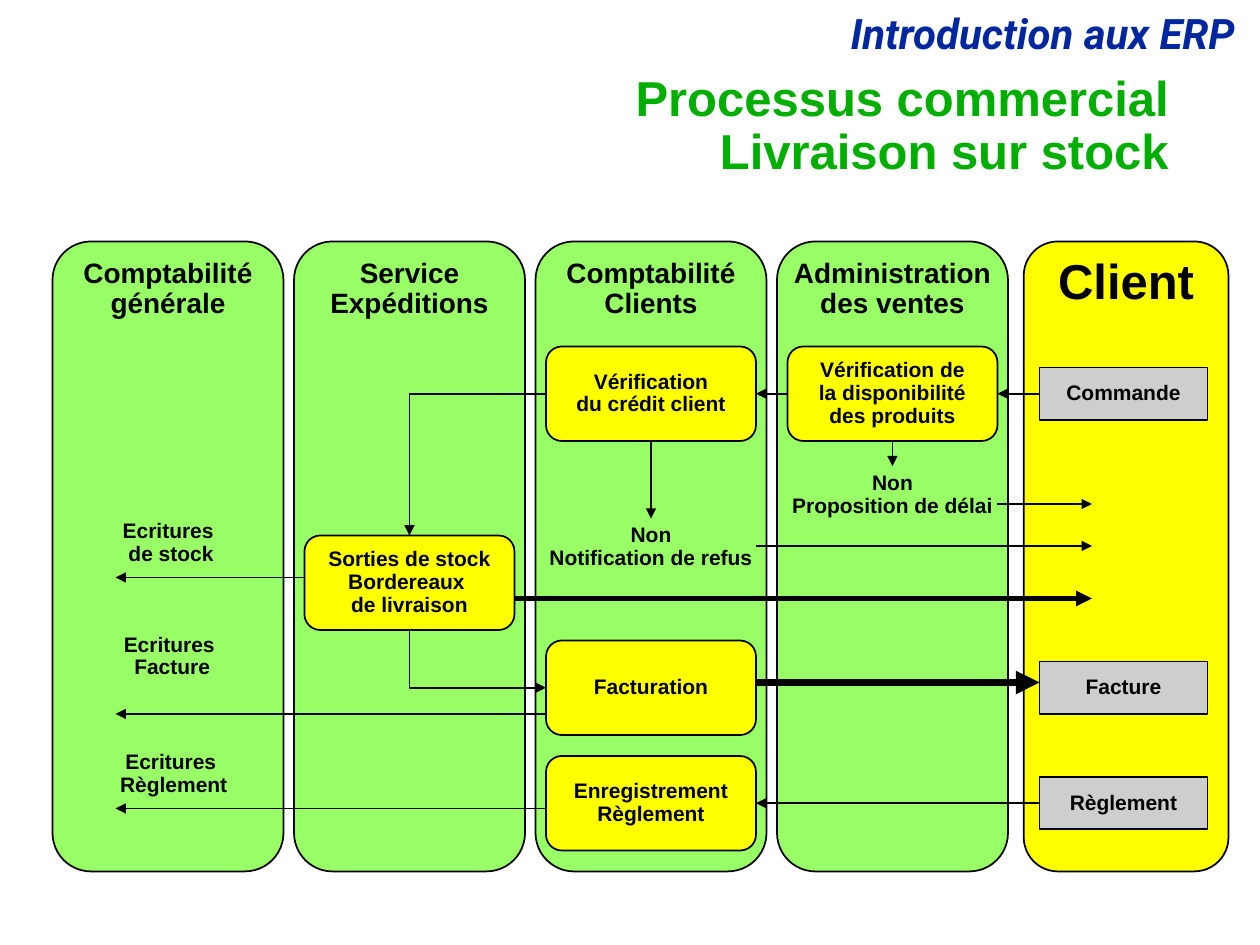
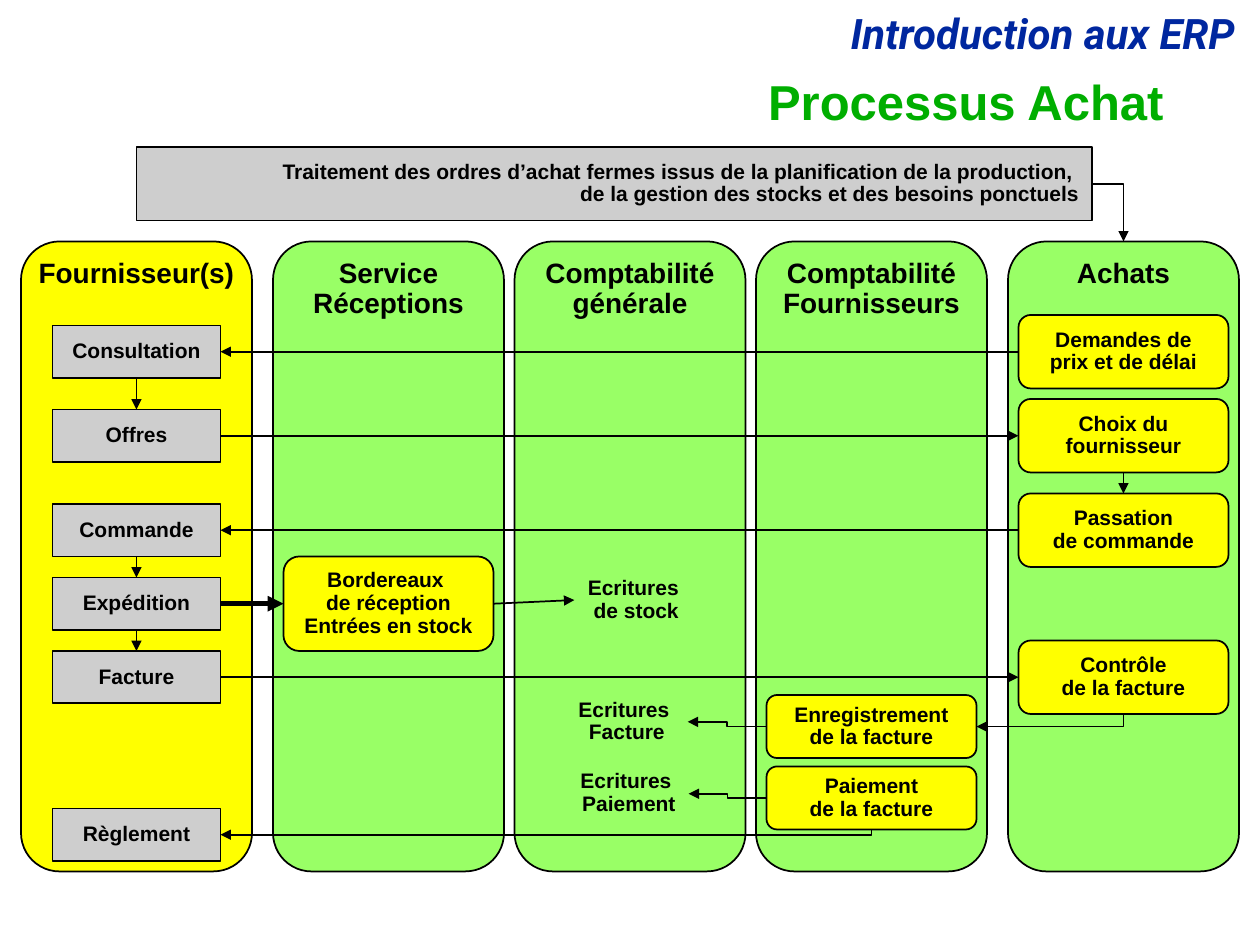
from lxml import etree
from pptx import Presentation
from pptx.dml.color import RGBColor
from pptx.enum.shapes import MSO_CONNECTOR, MSO_SHAPE
from pptx.enum.text import MSO_ANCHOR, MSO_AUTO_SIZE, PP_ALIGN
from pptx.oxml.ns import qn
from pptx.util import Cm, Pt

RECT = MSO_SHAPE.RECTANGLE
ROUND = MSO_SHAPE.ROUNDED_RECTANGLE
STRAIGHT, ELBOW = MSO_CONNECTOR.STRAIGHT, MSO_CONNECTOR.ELBOW
TOP, MIDDLE = MSO_ANCHOR.TOP, MSO_ANCHOR.MIDDLE
CENTER, RIGHT = PP_ALIGN.CENTER, PP_ALIGN.RIGHT
NO_FIT, GROW = MSO_AUTO_SIZE.NONE, MSO_AUTO_SIZE.SHAPE_TO_FIT_TEXT

BLACK, BLUE, TITLE_GREEN = "000000", "00279F", "00AE00"
LANE_GREEN, YELLOW, GREY = "99FF66", "FFFF00", "CECECE"

STEPS_PER_INCH = 12
LANE_TOP, LANE_WIDTH, LANE_HEIGHT = 23, 22, 60
STEP_WIDTH, STEP_HEIGHT = 20, 9
DOCUMENT_WIDTH, DOCUMENT_HEIGHT = 16, 5


def grid(steps):
    """Length of a number of grid steps."""
    return Cm(steps * 2.54 / STEPS_PER_INCH)


def rgb(code):
    return RGBColor.from_string(code)


class ProcessDeck:
    """Swim-lane slides; every position is given in grid steps."""

    def __init__(self):
        self.prs = Presentation()
        self.prs.slide_width, self.prs.slide_height = Cm(25.4), Cm(19.05)
        self.slide = None

    def set_text(self, frame, paragraphs, size=12, color=BLACK, font="Arial",
                 italic=False, align=CENTER, anchor=TOP, wrap=False):
        """Fill a frame; a line feed inside a paragraph is a line break."""
        frame.word_wrap = wrap
        frame.vertical_anchor = anchor
        for number, text in enumerate(paragraphs):
            paragraph = frame.add_paragraph() if number else frame.paragraphs[0]
            paragraph.alignment = align
            paragraph.line_spacing = 0.9
            for row, words in enumerate(text.split("\n")):
                if row:
                    paragraph.add_line_break()
                run = paragraph.add_run()
                run.text = words
                run.font.name, run.font.size = font, Pt(size)
                run.font.bold, run.font.italic = True, italic
                run.font.color.rgb = rgb(color)

    def start_slide(self, heading, left, top):
        self.slide = self.prs.slides.add_slide(self.prs.slide_layouts[5])
        title = self.slide.shapes.title
        title.left, title.top = grid(left), grid(top)
        title.width, title.height = grid(95), grid(6)
        title.text_frame.auto_size = NO_FIT
        self.set_text(title.text_frame, [heading], size=28, color=TITLE_GREEN,
                      align=RIGHT, anchor=MIDDLE, wrap=True)
        self.note(27.8, 0.7, 91, "Introduction aux ERP", size=24, color=BLUE,
                  font="Roboto", italic=True, align=RIGHT, wrap=True)

    def box(self, outline, left, top, width, height, fill, *paragraphs, **style):
        shape = self.slide.shapes.add_shape(
            outline, grid(left), grid(top), grid(width), grid(height))
        shape.shadow.inherit = False
        shape.fill.solid()
        shape.fill.fore_color.rgb = rgb(fill)
        shape.line.color.rgb = rgb(BLACK)
        shape.line.width = Pt(1)
        self.set_text(shape.text_frame, paragraphs, **style)

    def lane(self, left, name, fill=LANE_GREEN, width=LANE_WIDTH, size=16):
        self.box(ROUND, left, LANE_TOP, width, LANE_HEIGHT, fill, name, size=size)

    def step(self, left, top, *paragraphs, height=STEP_HEIGHT):
        self.box(ROUND, left, top, STEP_WIDTH, height, YELLOW, *paragraphs,
                 anchor=MIDDLE)

    def document(self, left, top, name):
        self.box(RECT, left, top, DOCUMENT_WIDTH, DOCUMENT_HEIGHT, GREY, name,
                 anchor=MIDDLE)

    def note(self, left, top, width, *paragraphs, **style):
        textbox = self.slide.shapes.add_textbox(
            grid(left), grid(top), grid(width), grid(5.5))
        textbox.text_frame.auto_size = GROW
        self.set_text(textbox.text_frame, paragraphs, **style)

    def arrow(self, x1, y1, x2, y2, weight=1, kind=STRAIGHT):
        connector = self.slide.shapes.add_connector(
            kind, grid(x1), grid(y1), grid(x2), grid(y2))
        connector.line.color.rgb = rgb(BLACK)
        connector.line.width = Pt(weight)
        properties = connector.element.spPr
        line = properties.find(qn("a:ln"))
        etree.SubElement(line, qn("a:tailEnd"), type="triangle")
        etree.SubElement(properties, qn("a:effectLst"))
        return properties

    def across_then_down(self, x1, y1, x2, y2):
        properties = self.arrow(x1, y1, x2, y2, kind=ELBOW)
        properties.find(qn("a:prstGeom")).set("prst", "bentConnector2")
        return properties

    def down_then_across(self, x1, y1, x2, y2):
        """One-corner arrow, drawn lying down and turned upright."""
        middle_x, middle_y = (x1 + x2) / 2, (y1 + y2) / 2
        half_drop, half_run = (y2 - y1) / 2, abs(x2 - x1) / 2
        quarter_turns = 1
        if x2 > x1:
            half_drop, quarter_turns = -half_drop, 3
        properties = self.across_then_down(
            middle_x - half_drop, middle_y - half_run,
            middle_x + half_drop, middle_y + half_run)
        properties.find(qn("a:xfrm")).set("rot", str(quarter_turns * 90 * 60000))


def add_sales_slide(deck):
    deck.start_slide("Processus commercial\nLivraison sur stock", 17.5, 9.1)

    deck.lane(97.5, "Client", YELLOW, width=19.5, size=28)
    departments = ["Comptabilité\ngénérale", "Service\nExpéditions",
                   "Comptabilité\nClients", "Administration\ndes ventes"]
    for number, department in enumerate(departments):
        deck.lane(5 + number * (LANE_WIDTH + 1), department)

    for top, name in [(35, "Commande"), (63, "Facture"), (74, "Règlement")]:
        deck.document(99, top, name)

    deck.step(75, 33, "Vérification de\nla disponibilité\ndes produits")
    deck.step(52, 33, "Vérification\ndu crédit client")
    deck.step(29, 51, "Sorties de stock", "Bordereaux \nde livraison")
    deck.step(52, 61, "Facturation")
    deck.step(52, 72, "Enregistrement\nRèglement")

    deck.note(74, 44.4, LANE_WIDTH, "Non\nProposition de délai", wrap=True)
    deck.note(51, 49.4, LANE_WIDTH, "Non\nNotification de refus", wrap=True)
    for left, top, width, subject in [(10.4, 49, 11.8, "de stock"),
                                      (10.5, 59.8, 11.8, "Facture"),
                                      (10.2, 71, 12.7, "Règlement")]:
        deck.note(left, top, width, "Ecritures ", subject)

    for x1, x2, y, weight in [
            (99, 95, 37.5, 1), (75, 72, 37.5, 1),
            (95, 104, 48, 1), (72, 104, 52, 1), (49, 104, 57, 3),
            (72, 99, 65, 4.5), (99, 72, 76.5, 1),
            (29, 11, 55, 1), (52, 11, 68, 1), (52, 11, 77, 1)]:
        deck.arrow(x1, y, x2, y, weight)
    deck.arrow(62, 42, 62, 49.4)
    deck.arrow(85, 42, 85, 44.4)
    deck.across_then_down(52, 37.5, 39, 51)
    deck.down_then_across(39, 60, 52, 65.5)


def add_purchasing_slide(deck):
    deck.start_slide("Processus Achat", 17, 7)

    deck.box(RECT, 13, 14, 91, 7, GREY,
             "Traitement des ordres d’achat fermes issus de la planification "
             "de la production, \nde la gestion des stocks et des besoins ponctuels",
             align=RIGHT, anchor=MIDDLE)
    deck.lane(2, "Fournisseur(s)", YELLOW)
    for left, department in [(26, "Service\nRéceptions"),
                             (49, "Comptabilité\ngénérale"),
                             (72, "Comptabilité\nFournisseurs"),
                             (96, "Achats")]:
        deck.lane(left, department)

    for top, name in [(31, "Consultation"), (39, "Offres"), (48, "Commande"),
                      (55, "Expédition"), (62, "Facture"), (77, "Règlement")]:
        deck.document(5, top, name)

    for top, task in [(30, "Demandes de\nprix et de délai"),
                      (38, "Choix du\nfournisseur"),
                      (47, "Passation\nde commande"),
                      (61, "Contrôle\nde la facture")]:
        deck.step(97, top, task, height=7)
    deck.step(27, 53, "Bordereaux \nde réception", "Entrées en stock")
    deck.step(73, 66.2, "Enregistrement\nde la facture", height=6)
    deck.step(73, 73, "Paiement\nde la facture", height=6)

    for left, top, subject in [(54.7, 54.4, "de stock"), (53.8, 66, "Facture"),
                               (54, 72.8, "Paiement")]:
        deck.note(left, top, 11.8, "Ecritures ", subject)

    for x1, x2, y, weight in [(97, 21, 33.5, 1), (21, 97, 41.5, 1),
                              (97, 21, 50.5, 1), (21, 27, 57.5, 3),
                              (21, 97, 64.5, 1)]:
        deck.arrow(x1, y, x2, y, weight)
    for x, y1, y2 in [(13, 36, 39), (13, 53, 55), (13, 60, 62), (107, 45, 47)]:
        deck.arrow(x, y1, x, y2)
    deck.arrow(47, 57.5, 54.7, 57.15)
    deck.arrow(73, 69.2, 65.5, 68.75, kind=ELBOW)
    deck.arrow(73, 76, 65.6, 75.6, kind=ELBOW)
    deck.across_then_down(104, 17.5, 107, LANE_TOP)
    deck.down_then_across(107, 68, 93, 69.2)
    deck.down_then_across(83, 79, 21, 79.5)


def main():
    deck = ProcessDeck()
    add_sales_slide(deck)
    add_purchasing_slide(deck)
    deck.prs.save("out.pptx")


if __name__ == "__main__":
    main()
